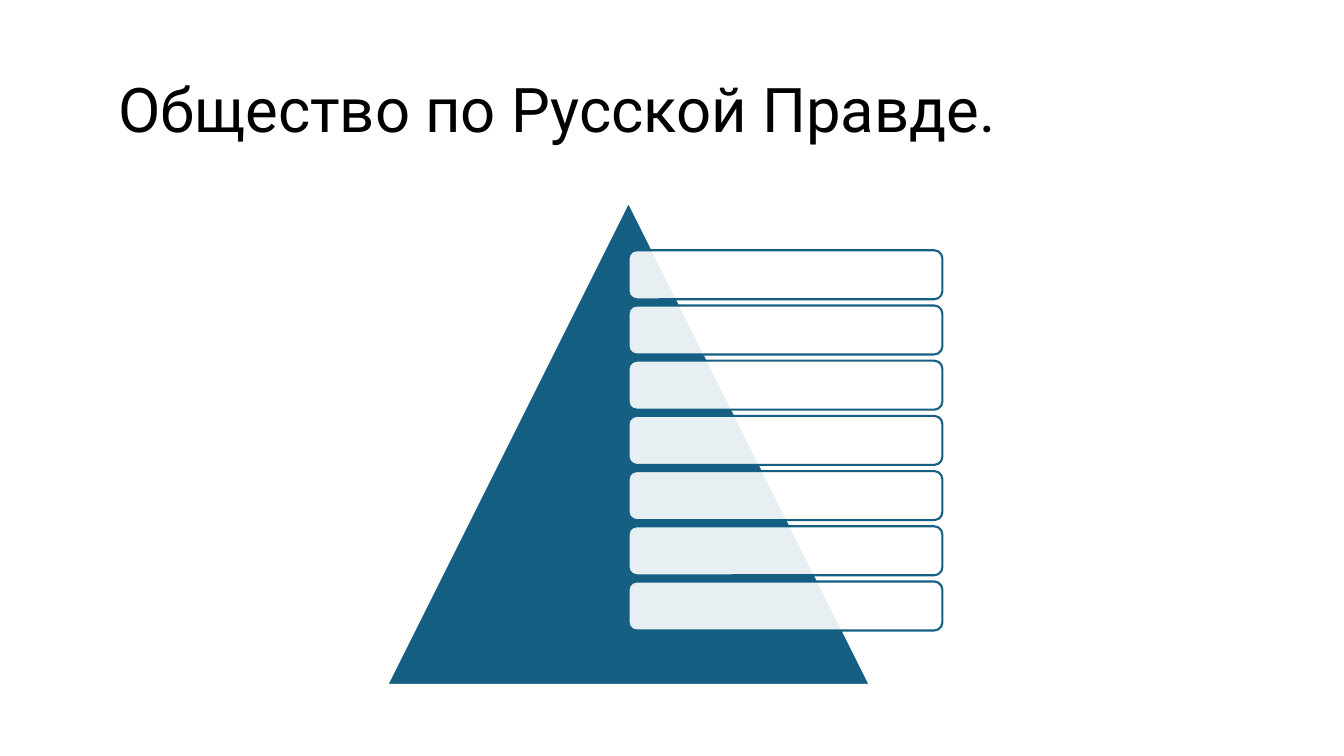
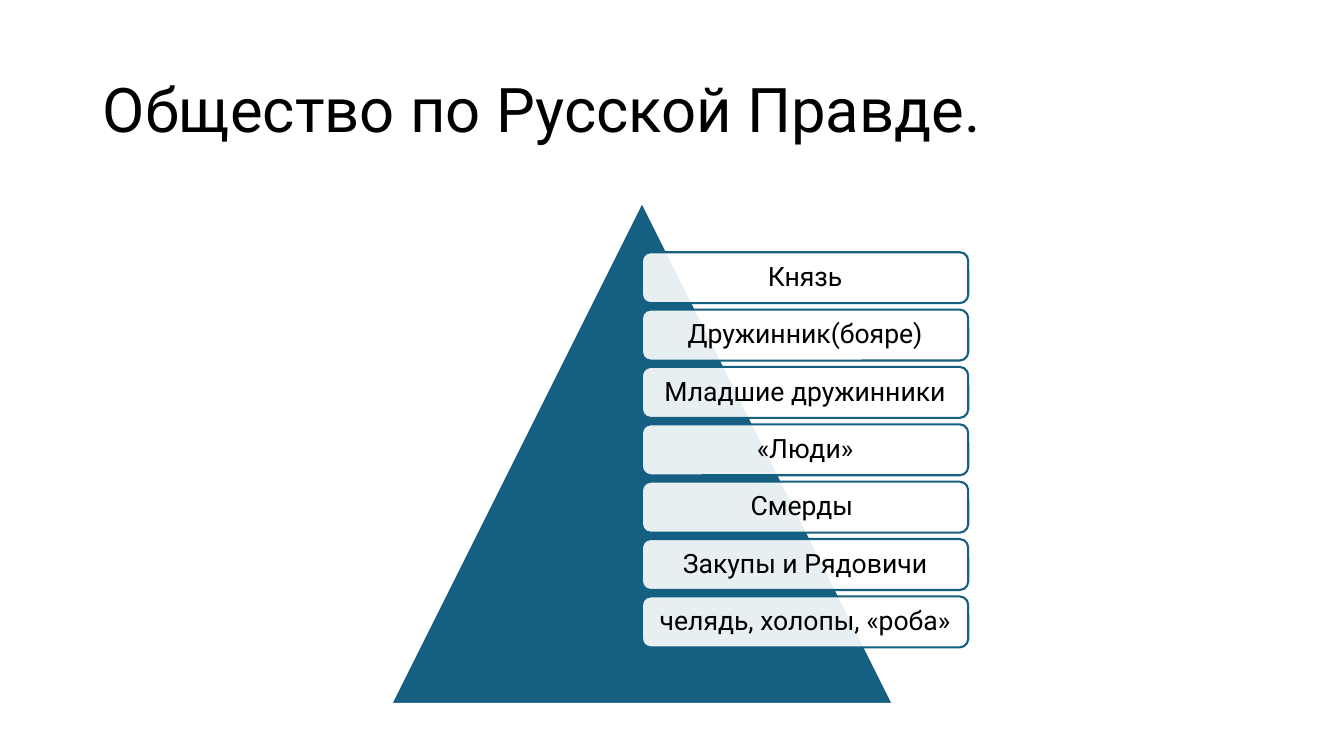
from lxml.etree import SubElement
from pptx import Presentation
from pptx.dml.color import RGBColor
from pptx.enum.shapes import MSO_SHAPE
from pptx.enum.text import MSO_ANCHOR, PP_ALIGN
from pptx.oxml.ns import qn
from pptx.util import Pt

TITLE = "Общество по Русской Правде."
RANKS = ["Князь", "Дружинник(бояре)", "Младшие дружинники", "«Люди»",
         "Смерды ", "Закупы и Рядовичи", "челядь, холопы, «роба»"]
# The pyramid is given as left, top, side
SLIDES = [
    {"title": " " + TITLE, "pyramid": (387, 202, 483), "ranks": [""] * len(RANKS)},
    {"title": TITLE, "pyramid": (391, 202, 502), "ranks": RANKS},
]

SIZE = (1344, 756)
TITLE_BOX = (93, 40, 1159, 146)
PAD = 8
BLUE = RGBColor(0x15, 0x60, 0x82)
WHITE = RGBColor(0xFF, 0xFF, 0xFF)
BLACK = RGBColor(0, 0, 0)
TITLE_FONT = {"name": "Roboto", "size": Pt(44)}
RANK_FONT = {"name": "Roboto", "size": Pt(19)}


def px(n):
    return round(n * 914400 / 100.8)


def write(shape, text, font, align):
    frame = shape.text_frame
    frame.word_wrap = True
    frame.vertical_anchor = MSO_ANCHOR.MIDDLE
    para = frame.paragraphs[0]
    para.alignment = align
    para.line_spacing = 0.9
    run = para.add_run()
    run.text = text
    for key, value in font.items():
        setattr(run.font, key, value)
    run.font.color.rgb = BLACK
    return frame


def draw(slide, kind, box, fill, line):
    shape = slide.shapes.add_shape(kind, *map(px, box))
    shape.shadow.inherit = False
    shape.fill.solid()
    shape.fill.fore_color.rgb = fill
    shape.line.color.rgb = line
    shape.line.width = Pt(1.5)
    return shape


def fade(shape, percent):
    """Set the opacity of a solid fill."""
    color = shape.fill._xPr.find(qn("a:solidFill"))[0]
    SubElement(color, qn("a:alpha"), val=str(percent * 1000))


def add_ranks(slide, left, top, side, ranks):
    """Draw the pyramid and its bars, all sized from its side."""
    draw(slide, MSO_SHAPE.ISOSCELES_TRIANGLE, (left, top, side, side), BLUE, WHITE)
    pitch = side * 0.8 / len(ranks)
    for i, rank in enumerate(ranks):
        box = (left + side / 2, top + side / 10 + i * pitch,
               side * 0.65, pitch * 8 / 9)
        bar = draw(slide, MSO_SHAPE.ROUNDED_RECTANGLE, box, WHITE, BLUE)
        fade(bar, 90)
        if rank:
            frame = write(bar, rank, RANK_FONT, PP_ALIGN.CENTER)
            for edge in ("left", "top", "right", "bottom"):
                setattr(frame, "margin_" + edge, px(PAD))


def main():
    deck = Presentation()
    deck.slide_width, deck.slide_height = map(px, SIZE)
    for page in SLIDES:
        slide = deck.slides.add_slide(deck.slide_layouts[6])
        title = slide.shapes.add_textbox(*map(px, TITLE_BOX))
        write(title, page["title"], TITLE_FONT, PP_ALIGN.LEFT)
        add_ranks(slide, *page["pyramid"], page["ranks"])
    deck.save("out.pptx")


if __name__ == "__main__":
    main()
